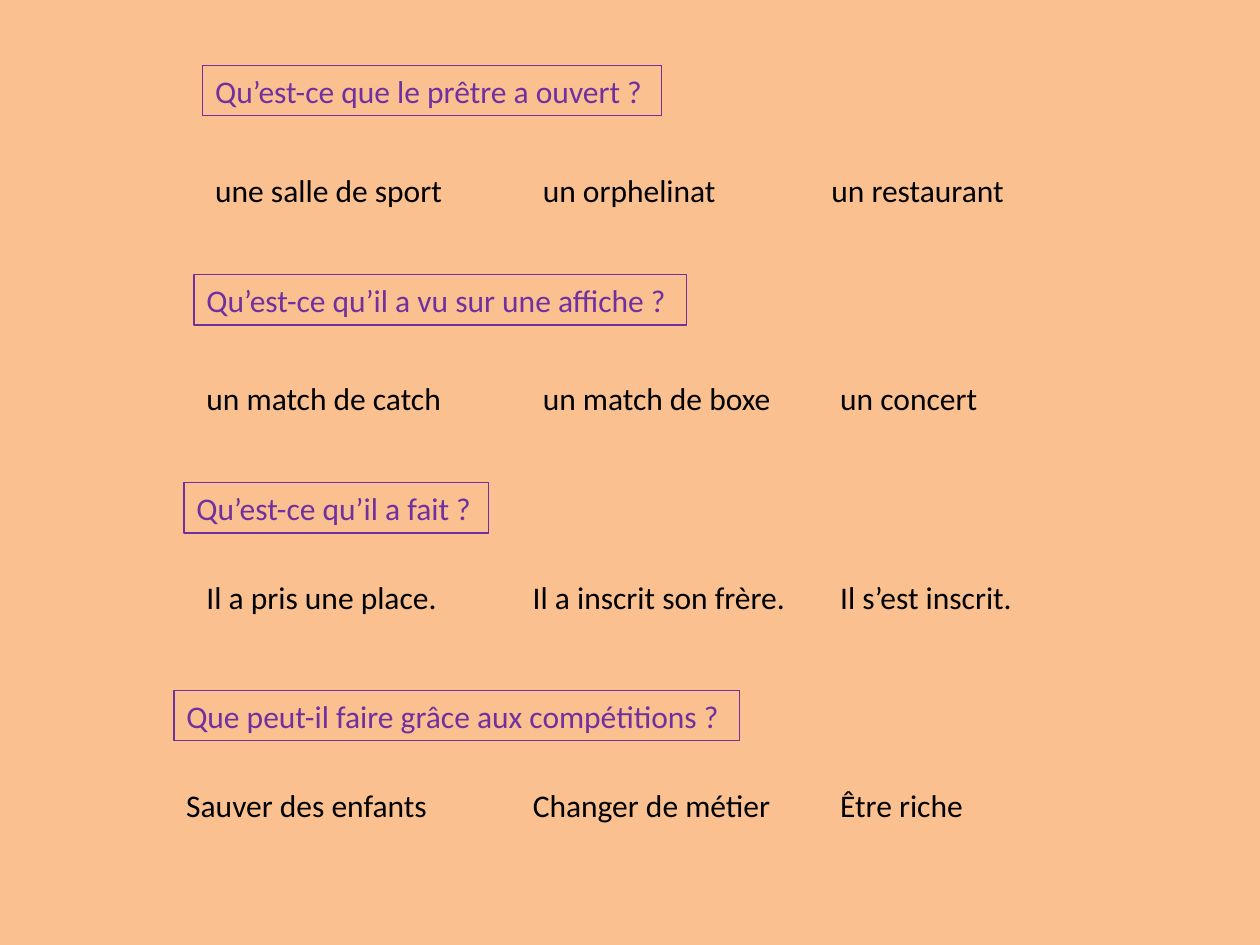
import dataclasses

import pptx
import pptx.dml.color
import pptx.enum.text
import pptx.util
from pptx.util import Inches


@dataclasses.dataclass(frozen=True)
class Theme:
    background: str = "FAC090"
    question: str = "7030A0"
    answer: str = "000000"
    font: str = "Calibri"
    size: int = 18
    outline: float = 0.75


THEME = Theme()
TEXT_HEIGHT = 0.4

# Each block: left, top, question, question width, drop to the answers,
# then the answers as (text, left, width), with lefts measured on the slide
BLOCKS = [
    (1.61, 0.52, "Qu’est-ce que le prêtre a ouvert ?", 3.64, 0.79, [
        ("une salle de sport", 1.61, 2.03),
        ("un orphelinat", 4.21, 1.59),
        ("un restaurant", 6.5, 1.59)]),
    (1.54, 2.18, "Qu’est-ce qu’il a vu sur une affiche ?", 3.91, 0.78, [
        ("un match de catch", 1.54, 2.09),
        ("un match de boxe", 4.21, 2.03),
        ("un concert", 6.57, 1.42)]),
    (1.46, 3.83, "Qu’est-ce qu’il a fait ?", 2.42, 0.71, [
        ("Il a pris une place.", 1.54, 2.05),
        ("Il a inscrit son frère.", 4.13, 2.23),
        ("Il s’est inscrit.", 6.57, 1.58)]),
    (1.38, 5.48, "Que peut-il faire grâce aux compétitions ?", 4.49, 0.71, [
        ("Sauver des enfants", 1.38, 2.13),
        ("Changer de métier", 4.13, 2.11),
        ("Être riche", 6.57, 1.19)]),
]


def rgb(value):
    return pptx.dml.color.RGBColor.from_string(value)


def add_label(slide, text, left, top, width, color):
    """Add one line of text and return its box."""
    shape = slide.shapes.add_textbox(
        Inches(left), Inches(top), Inches(width), Inches(TEXT_HEIGHT))
    shape.text_frame.word_wrap = True
    shape.text_frame.auto_size = pptx.enum.text.MSO_AUTO_SIZE.SHAPE_TO_FIT_TEXT
    paragraph = shape.text_frame.paragraphs[0]
    paragraph.text = text
    paragraph.font.name = THEME.font
    paragraph.font.size = pptx.util.Pt(THEME.size)
    paragraph.font.color.rgb = rgb(color)
    return shape


def add_question_block(slide, left, top, question, width, drop, answers):
    """Add a framed question with its row of answers below."""
    frame = add_label(slide, question, left, top, width, THEME.question)
    frame.line.color.rgb = rgb(THEME.question)
    frame.line.width = pptx.util.Pt(THEME.outline)
    for answer, answer_left, answer_width in answers:
        add_label(slide, answer, answer_left, top + drop, answer_width,
                  THEME.answer)


def main():
    presentation = pptx.Presentation()
    presentation.slide_width = Inches(10)
    presentation.slide_height = Inches(7.5)
    slide = presentation.slides.add_slide(presentation.slide_layouts[6])

    # Background
    slide.background.fill.solid()
    slide.background.fill.fore_color.rgb = rgb(THEME.background)

    # Questions and answers
    for block in BLOCKS:
        add_question_block(slide, *block)

    presentation.save("out.pptx")


if __name__ == "__main__":
    main()
